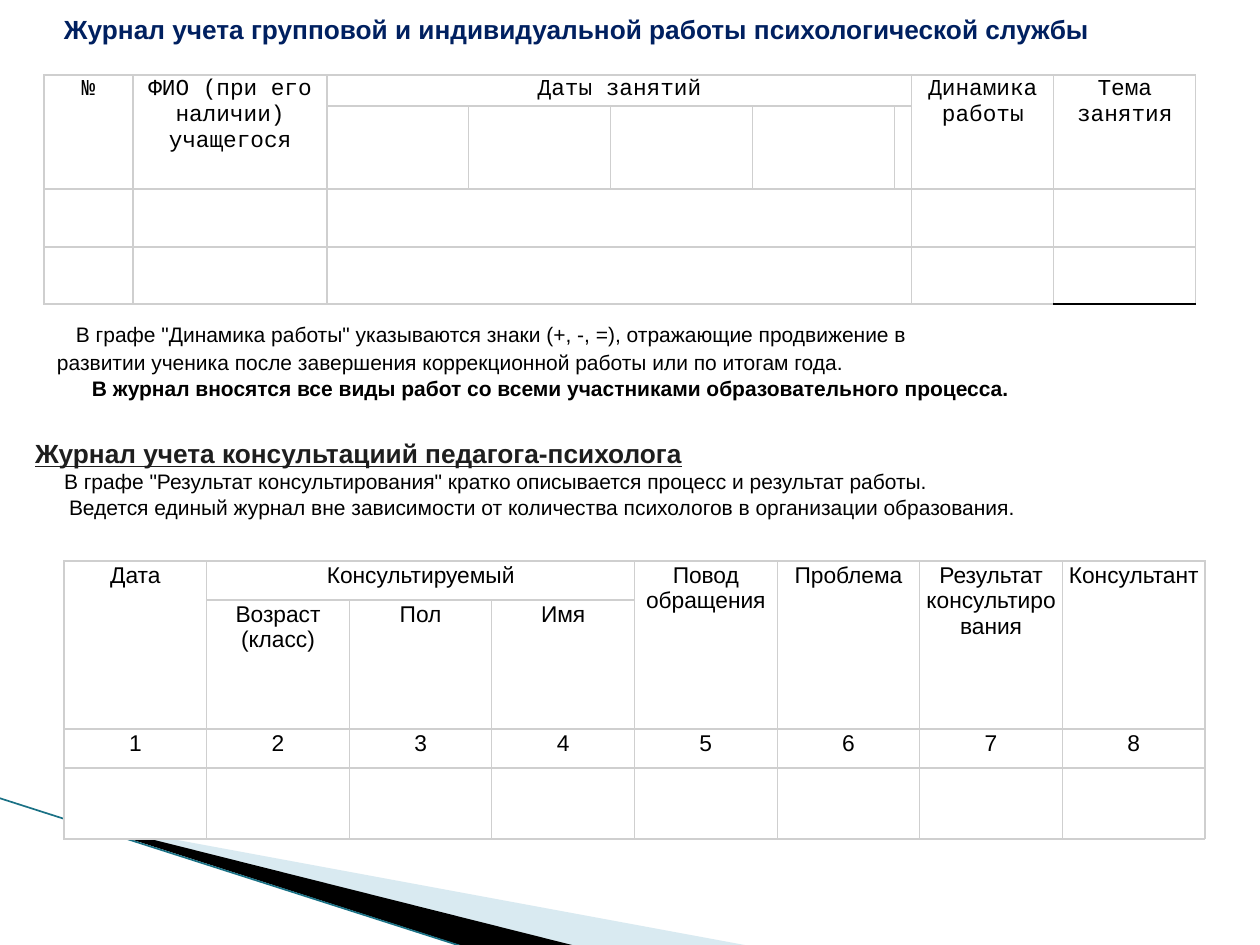
import pptx
import pptx.util
from lxml import etree
from pptx.dml.color import RGBColor
from pptx.enum.shapes import MSO_CONNECTOR, MSO_SHAPE
from pptx.enum.text import MSO_ANCHOR, MSO_AUTO_SIZE, PP_ALIGN
from pptx.oxml.ns import qn

SCALE = 914400 / 126  # EMU in one px
WHITE = RGBColor(0xFF, 0xFF, 0xFF)
BLACK = RGBColor(0x00, 0x00, 0x00)
NAVY = RGBColor(0x00, 0x20, 0x60)
CHARCOAL = RGBColor(0x1E, 0x1E, 0x1E)
GRID = RGBColor(0xCF, 0xCF, 0xCF)
PALE_BLUE = RGBColor(0xA0, 0xCB, 0xDC)
TEAL = RGBColor(0x1A, 0x71, 0x85)


def px(n):
    return pptx.util.Emu(round(n * SCALE))


def add_run(p, text, size=12, font="Arial", color=BLACK, bold=False, underline=False):
    r = p.add_run()
    r.text = text
    r.font.size = pptx.util.Pt(size)
    r.font.name = font
    r.font.color.rgb = color
    r.font.bold = bold
    r.font.underline = underline


def set_frame(tf, anchor):
    """Wrap the text and drop the insets."""
    tf.word_wrap = True
    tf.auto_size = MSO_AUTO_SIZE.NONE
    tf.vertical_anchor = anchor
    tf.margin_left = tf.margin_right = tf.margin_top = tf.margin_bottom = 0


def add_lines(tf, lines):
    """Fill a frame from (indent in px, space before in pt, text, format)."""
    for i, (indent, before, text, fmt) in enumerate(lines):
        p = tf.add_paragraph() if i else tf.paragraphs[0]
        p.alignment = PP_ALIGN.LEFT
        if before:
            p.space_before = pptx.util.Pt(before)
        if indent:
            pPr = p._p.get_or_add_pPr()
            pPr.set("marL", str(px(indent)))
            pPr.set("indent", "0")
        add_run(p, text, **fmt)


def add_wedge(s, points, color, alpha=None):
    builder = s.shapes.build_freeform(*points[0], scale=SCALE)
    builder.add_line_segments(points[1:], close=True)
    sp = builder.convert_to_shape()
    sp.shadow.inherit = False
    sp.line.fill.background()
    sp.fill.solid()
    sp.fill.fore_color.rgb = color
    if alpha:
        clr = sp._element.spPr.find(".//" + qn("a:srgbClr"))
        etree.SubElement(clr, qn("a:alpha"), val=str(alpha * 1000))


def add_line(s, x1, y1, x2, y2, color, width):
    line = s.shapes.add_connector(MSO_CONNECTOR.STRAIGHT, px(x1), px(y1), px(x2), px(y2))
    line.line.color.rgb = color
    line.line.width = pptx.util.Pt(width)
    etree.SubElement(line._element.spPr, qn("a:effectLst"))


def set_borders(cell, bottom=(GRID, 0.75)):
    tcPr = cell._tc.get_or_add_tcPr()
    for side in "LRTB":
        color, width = bottom if side == "B" else (GRID, 0.75)
        ln = etree.SubElement(tcPr, qn("a:ln" + side), w=str(pptx.util.Pt(width)))
        fill = etree.SubElement(ln, qn("a:solidFill"))
        etree.SubElement(fill, qn("a:srgbClr"), val=str(color))


def add_grid(s, x, y, widths, heights, texts, spans, font, black_corner=False):
    """Add a table; texts maps (row, col) to wording, spans to (rows, cols)."""
    frame = s.shapes.add_table(len(heights), len(widths), px(x), px(y),
                               px(sum(widths)), px(sum(heights)))
    table = frame.table
    table.first_row = table.horz_banding = False
    for col, width in zip(table.columns, widths):
        col.width = px(width)
    for row, height in zip(table.rows, heights):
        row.height = px(height)
    last = (len(heights) - 1, len(widths) - 1)
    for r in range(len(heights)):
        for c in range(len(widths)):
            cell = table.cell(r, c)
            cell.margin_left = cell.margin_right = px(5)
            cell.margin_top = cell.margin_bottom = px(2)
            if black_corner and (r, c) == last:
                set_borders(cell, bottom=(BLACK, 1))
            else:
                set_borders(cell)
            cell.fill.solid()
            cell.fill.fore_color.rgb = WHITE
            p = cell.text_frame.paragraphs[0]
            p.alignment = PP_ALIGN.CENTER
            add_run(p, texts.get((r, c), ""), size=13, font=font)
    for (r, c), (rows, cols) in spans.items():
        table.cell(r, c).merge(table.cell(r + rows - 1, c + cols - 1))


def add_sessions_table(s):
    texts = {(0, 0): "№", (0, 1): "ФИО (при его наличии) учащегося",
             (0, 2): "Даты занятий", (0, 7): "Динамика работы", (0, 8): "Тема занятия"}
    spans = {(0, c): (2, 1) for c in (0, 1, 7, 8)}
    spans.update({(r, 2): (1, 5) for r in (0, 2, 3)})
    add_grid(s, 44, 75, [89, 194] + [142] * 4 + [17] + [142] * 2, [31, 83, 58, 57],
             texts, spans, "Courier New", black_corner=True)


def add_consultations_table(s):
    texts = {(0, 0): "Дата", (0, 1): "Консультируемый", (0, 4): "Повод обращения",
             (0, 5): "Проблема", (0, 6): "Результат консультирования",
             (0, 7): "Консультант",
             (1, 1): "Возраст (класс)", (1, 2): "Пол", (1, 3): "Имя"}
    texts.update({(2, c): str(c + 1) for c in range(8)})
    spans = {(0, c): (2, 1) for c in (0, 4, 5, 6, 7)}
    spans[0, 1] = (1, 3)
    add_grid(s, 64, 561, [1141 / 8] * 8, [39, 129, 39, 71], texts, spans, "Arial")


def add_title(s):
    sp = s.shapes.title
    sp.left, sp.top, sp.width, sp.height = px(64), px(13), px(1171), px(32)
    set_frame(sp.text_frame, MSO_ANCHOR.TOP)
    add_lines(sp.text_frame, [
        (0, 0, "Журнал учета групповой и индивидуальной работы психологической службы",
         dict(size=15, color=NAVY, bold=True))])


def add_sessions_note(s):
    sp = s.shapes.add_textbox(px(57), px(322), px(1158), px(80))
    set_frame(sp.text_frame, MSO_ANCHOR.TOP)
    add_lines(sp.text_frame, [
        (19, 0, 'В графе "Динамика работы" указываются знаки (+, -, =), '
                'отражающие продвижение в', {}),
        (0, 1.5, "развитии ученика после завершения коррекционной работы "
                 "или по итогам года.", {}),
        (35, 0.5, "В журнал вносятся все виды работ со всеми участниками "
                  "образовательного процесса.", dict(bold=True))])


def add_consultations_heading(s):
    sp = s.shapes.add_shape(MSO_SHAPE.RECTANGLE, px(35), px(437), px(1201), px(83))
    sp.shadow.inherit = False
    sp.fill.solid()
    sp.fill.fore_color.rgb = WHITE
    sp.line.fill.background()
    set_frame(sp.text_frame, MSO_ANCHOR.MIDDLE)
    add_lines(sp.text_frame, [
        (0, 0, "Журнал учета консультациий педагога-психолога",
         dict(size=15, color=CHARCOAL, bold=True, underline=True)),
        (29, 0, 'В графе "Результат консультирования" кратко описывается '
                'процесс и результат работы.', {}),
        (34, 0.5, "Ведется единый журнал вне зависимости от количества психологов "
                  "в организации образования.", {})])


def main():
    prs = pptx.Presentation()
    prs.slide_width, prs.slide_height = px(1260), px(945)
    s = prs.slides.add_slide(prs.slide_layouts[5])
    add_wedge(s, [(69, 820), (750, 946), (575, 946), (69, 819)], PALE_BLUE, alpha=40)
    add_wedge(s, [(67, 818), (576, 946), (469, 948), (68, 819)], BLACK)
    add_line(s, -1, 798, 467, 948, TEAL, 0.95)
    add_title(s)
    add_sessions_table(s)
    add_sessions_note(s)
    add_consultations_table(s)
    add_consultations_heading(s)
    prs.save("out.pptx")


if __name__ == "__main__":
    main()
